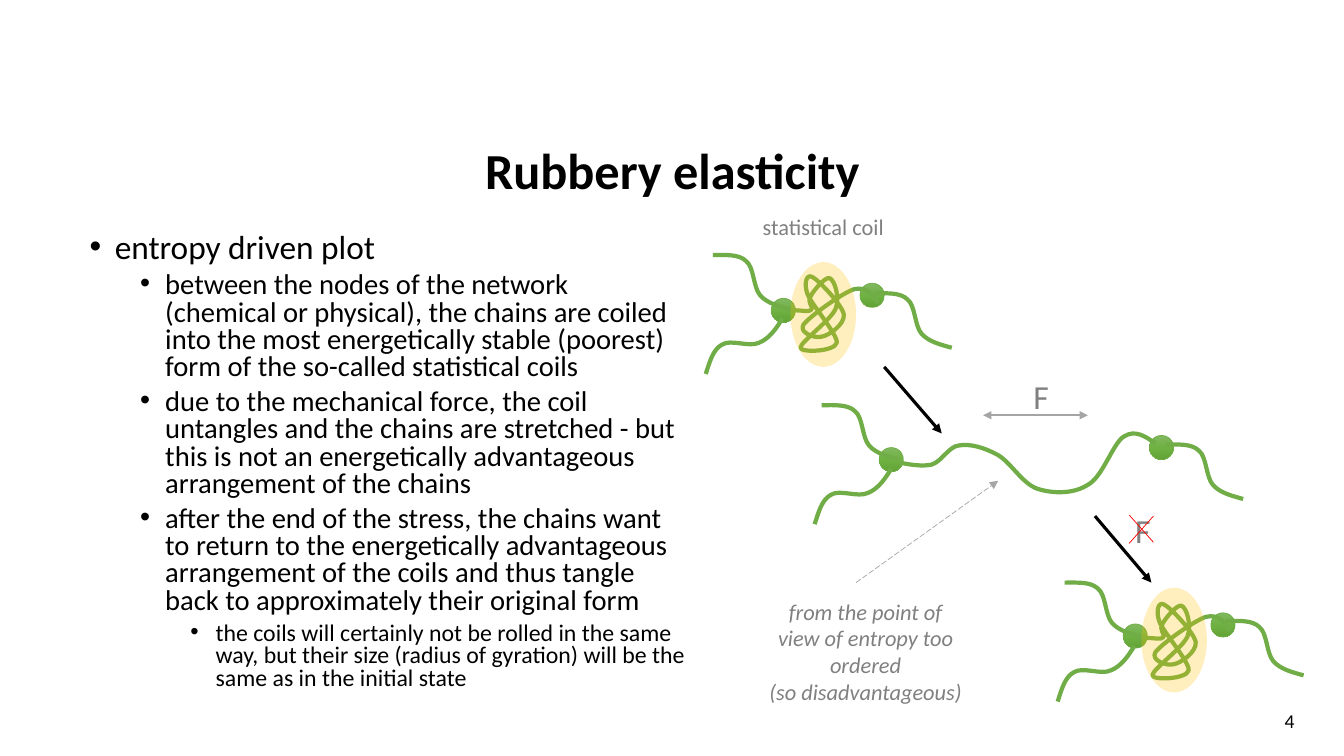
from copy import deepcopy
from dataclasses import dataclass

from lxml import etree
from pptx import Presentation
from pptx.dml.color import RGBColor
from pptx.enum.dml import MSO_LINE
from pptx.enum.shapes import MSO_CONNECTOR, MSO_SHAPE
from pptx.enum.text import MSO_ANCHOR, PP_ALIGN
from pptx.oxml.ns import qn
from pptx.util import Inches, Pt

STRAIGHT = MSO_CONNECTOR.STRAIGHT
OVAL = MSO_SHAPE.OVAL
LONG_DASH = MSO_LINE.LONG_DASH
LEFT, CENTER = PP_ALIGN.LEFT, PP_ALIGN.CENTER
TOP, MIDDLE = MSO_ANCHOR.TOP, MSO_ANCHOR.MIDDLE

Point = tuple[float, float]


@dataclass(frozen=True)
class Theme:
    font: str = "Calibri"
    ink: str = "000000"
    muted: str = "808080"
    pointer: str = "A5A5A5"
    cancel: str = "FF0000"
    chain: str = "70AD47"
    halo: str = "FFC000"
    node_stops: tuple = ((0, "81B861"), (0.5, "6FB242"), (1, "62A336"))
    title: float = 36
    levels: tuple = (23.8, 20.4, 17)
    force: float = 24
    label: float = 16
    number: float = 14


THEME = Theme()


@dataclass(frozen=True)
class Label:
    text: str
    box: tuple[float, float, float, float]
    size: float
    color: str
    align: int = CENTER
    anchor: int = TOP
    wrap: bool = True
    bold: bool = False
    italic: bool = False
    spacing: float = 1.0


@dataclass(frozen=True)
class Bullet:
    level: int
    text: str


@dataclass(frozen=True)
class Line:
    start: Point
    end: Point
    color: str
    width: float
    arrow: bool = True
    dashed: bool = False


@dataclass(frozen=True)
class Network:
    left_node: Point
    right_node: Point
    left_strands: Point
    right_strand: Point
    chain: Point
    halo: Point | None = None


# Curves: a start point, then two control points and an end point per segment
STRAND = [(.77, .54), (.66, .51), (.54, .48), (.47, .4), (.4, .32), (.41, .12), (.33, .06),
          (.26, -.01), (.13, 0), (0, 0)]
LOWER_STRAND = [(.69, .63), (.63, .73), (.56, .83), (.46, .87), (.36, .92), (.18, .83),
                (.09, .89), (0, .94), (-.03, 1.06), (-.07, 1.18)]
COIL = [(0, .32), (.04, .33), (.09, .34), (.13, .34), (.18, .34), (.25, .36), (.27, .33),
        (.29, .31), (.22, .25), (.26, .2), (.29, .14), (.41, 0), (.45, .02),
        (.5, .04), (.55, .21), (.51, .32), (.46, .44), (.16, .65), (.16, .71),
        (.16, .76), (.5, .75), (.52, .66), (.53, .58), (.27, .28), (.23, .18),
        (.19, .07), (.22, -.03), (.28, .01), (.34, .04), (.57, .28), (.59, .38),
        (.6, .48), (.44, .59), (.37, .6), (.3, .62), (.14, .56), (.19, .48),
        (.25, .4), (.57, .17), (.69, .13), (.82, .1), (.87, .18), (.93, .27)]
STRETCHED = [(0, .29), (.11, .31), (.22, .33), (.32, .31), (.42, .28), (.49, .13), (.59, .12),
             (.7, .1), (.84, .14), (.97, .21), (1.1, .28), (1.22, .5), (1.37, .55),
             (1.53, .6), (1.73, .6), (1.87, .51), (2.02, .43), (2.12, .09), (2.23, .03),
             (2.34, -.04), (2.44, .03), (2.54, .1)]

NETWORKS = [
    Network((7.65, 2.96), (8.53, 2.81), (7.07, 2.53), (8.67, 2.91), (7.78, 2.74), (7.84, 2.6)),
    Network((8.72, 4.44), (11.4, 4.32), (8.15, 4.02), (11.56, 4.41), (8.92, 4.3)),
    Network((11.14, 6.19), (12.01, 6.08), (10.56, 5.78), (12.16, 6.16), (11.27, 5.99),
            (11.32, 5.83)),
]
LABELS = [
    Label("4", (12.51, 6.95, .56, .4), THEME.number, THEME.ink, anchor=MIDDLE),
    Label("Rubbery elasticity", (.92, .99, 11.5, 1.45), THEME.title, THEME.ink,
          anchor=MIDDLE, bold=True, spacing=.9),
    Label("F", (10.15, 3.68, .36, .5), THEME.force, THEME.muted, LEFT, wrap=False),
    Label("statistical coil", (7.22, 2.07, 1.89, .37), THEME.label, THEME.muted),
    Label("F", (11.16, 5.01, .36, .5), THEME.force, THEME.muted, LEFT, wrap=False),
    Label("from the point of view of entropy too ordered\v(so disadvantageous)",
          (7.51, 5.88, 2.15, 1.18), THEME.label, THEME.muted, italic=True),
]
LINES = [
    Line((8.77, 3.64), (9.34, 4.3), THEME.ink, 2.25),
    Line((9.95, 4.12), (10.79, 4.12), THEME.pointer, 1.5),
    Line((10.6, 4.12), (9.75, 4.12), THEME.pointer, 1.5),
    Line((10.86, 5.12), (11.42, 5.78), THEME.ink, 2.25),
    Line((11.2, 5.39), (11.44, 5.12), THEME.cancel, .5, arrow=False),
    Line((11.44, 5.38), (11.2, 5.11), THEME.cancel, .5, arrow=False),
    Line((8.49, 5.78), (9.9, 4.77), THEME.pointer, .5, dashed=True),
]
BULLETS = [
    Bullet(0, "entropy driven plot"),
    Bullet(1, "between the nodes of the network (chemical or physical), the chains are coiled "
              "into the most energetically stable (poorest) form of the so-called statistical coils"),
    Bullet(1, "due to the mechanical force, the coil untangles and the chains are stretched - but "
              "this is not an energetically advantageous arrangement of the chains"),
    Bullet(1, "after the end of the stress, the chains want to return to the energetically "
              "advantageous arrangement of the coils and thus tangle back to approximately "
              "their original form"),
    Bullet(2, "the coils will certainly not be rolled in the same way, but their size (radius of "
              "gyration) will be the same as in the initial state"),
]


def rgb(color: str) -> RGBColor:
    return RGBColor.from_string(color)


def set_font(paragraph, color: str, **values) -> None:
    for run in paragraph.runs:
        for key, value in {"name": THEME.font, **values}.items():
            setattr(run.font, key, value)
        run.font.color.rgb = rgb(color)


def add_label(slide, label: Label) -> None:
    frame = slide.shapes.add_textbox(*map(Inches, label.box)).text_frame
    frame.word_wrap, frame.vertical_anchor = label.wrap, label.anchor
    paragraph = frame.paragraphs[0]
    paragraph.text, paragraph.alignment = label.text, label.align
    paragraph.line_spacing = label.spacing
    set_font(paragraph, label.color, size=Pt(label.size), bold=label.bold, italic=label.italic)


def add_bullets(slide, bullets: list[Bullet]) -> None:
    frame = slide.shapes.add_textbox(*map(Inches, (.79, 2.27, 6.11, 4.88))).text_frame
    frame.word_wrap = True
    for index, bullet in enumerate(bullets):
        paragraph = frame.add_paragraph() if index else frame.paragraphs[0]
        paragraph.text, paragraph.level = bullet.text, bullet.level
        paragraph.line_spacing, paragraph.space_before = .8, Pt(5 if index else 0)
        properties = paragraph._p.get_or_add_pPr()
        properties.set("marL", str(Inches(.25 + .5 * bullet.level)))
        properties.set("indent", str(Inches(-.25)))
        etree.SubElement(properties, qn("a:buFont")).set("typeface", "Arial")
        etree.SubElement(properties, qn("a:buChar")).set("char", "•")
        set_font(paragraph, THEME.ink, size=Pt(THEME.levels[bullet.level]))


def add_node(slide, place: Point) -> None:
    node = slide.shapes.add_shape(OVAL, *map(Inches, (*place, .24, .24)))
    node.shadow.inherit = False
    node.fill.gradient()
    node.fill.gradient_angle = 270
    stop_list = node._element.spPr.find(f".//{qn('a:gsLst')}")
    stop_list.append(deepcopy(stop_list[0]))
    for stop, (position, color) in zip(node.fill.gradient_stops, THEME.node_stops):
        stop.position, stop.color.rgb = position, rgb(color)
    node.line.color.rgb, node.line.width = rgb(THEME.chain), Pt(.5)


def add_curve(slide, origin: Point, points: list[Point]) -> None:
    start, *rest = [(Inches(origin[0] + x), Inches(origin[1] + y)) for x, y in points]
    builder = slide.shapes.build_freeform(*start)
    builder.add_line_segments(rest, close=False)
    curve = builder.convert_to_shape()
    # Every three straight steps become one Bézier segment
    outline = curve._element.spPr.find(f".//{qn('a:path')}")
    steps = outline.findall(qn("a:lnTo"))
    for first in range(0, len(steps), 3):
        segment = etree.SubElement(outline, qn("a:cubicBezTo"))
        for step in steps[first:first + 3]:
            segment.append(step[0])
            outline.remove(step)
    curve.shadow.inherit = False
    curve.fill.background()
    curve.line.color.rgb, curve.line.width = rgb(THEME.chain), Pt(3)


def add_halo(slide, place: Point) -> None:
    halo = slide.shapes.add_shape(OVAL, *map(Inches, (*place, .65, 1.04)))
    halo.shadow.inherit = False
    halo.fill.solid()
    halo.fill.fore_color.rgb = rgb(THEME.halo)
    color = halo._element.spPr.find(f".//{qn('a:srgbClr')}")
    etree.SubElement(color, qn("a:alpha")).set("val", "25000")
    halo.line.fill.background()


def add_network(slide, network: Network) -> None:
    add_node(slide, network.left_node)
    add_node(slide, network.right_node)
    add_curve(slide, network.chain, COIL if network.halo else STRETCHED)
    add_curve(slide, network.right_strand, STRAND)
    add_curve(slide, network.left_strands, LOWER_STRAND)
    add_curve(slide, network.left_strands, STRAND)
    if network.halo:
        add_halo(slide, network.halo)


def add_line(slide, line: Line) -> None:
    connector = slide.shapes.add_connector(STRAIGHT, *map(Inches, (*line.start, *line.end)))
    connector.line.color.rgb, connector.line.width = rgb(line.color), Pt(line.width)
    if line.dashed:
        connector.line.dash_style = LONG_DASH
    if line.arrow:
        etree.SubElement(connector.line._get_or_add_ln(), qn("a:tailEnd")).set("type", "triangle")
    etree.SubElement(connector._element.spPr, qn("a:effectLst"))


def main() -> None:
    deck = Presentation()
    deck.slide_width, deck.slide_height = Inches(13.33), Inches(7.5)
    slide = deck.slides.add_slide(deck.slide_layouts[6])
    # Text on the left, then the three chain states, then labels and arrows
    add_bullets(slide, BULLETS)
    for network in NETWORKS:
        add_network(slide, network)
    for label in LABELS:
        add_label(slide, label)
    for line in LINES:
        add_line(slide, line)
    deck.save("out.pptx")


if __name__ == "__main__":
    main()
